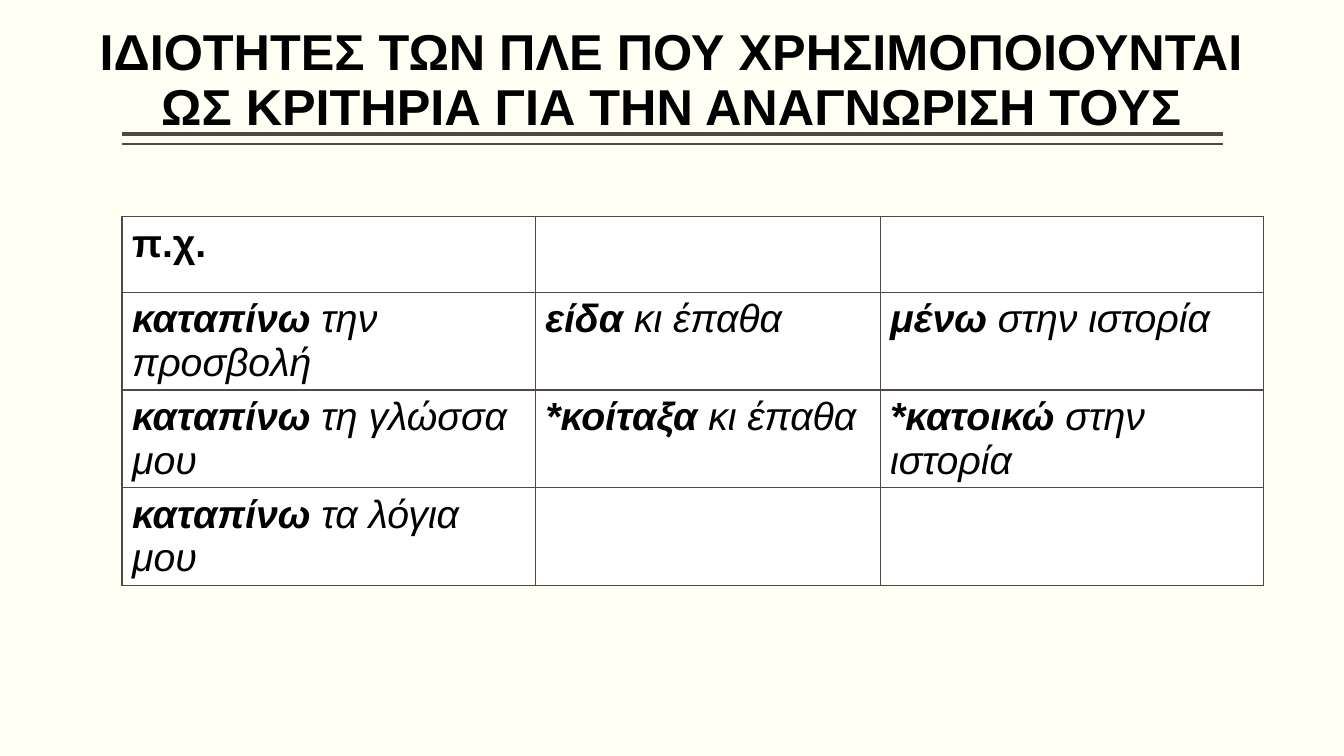
from lxml import etree
from pptx import Presentation
from pptx.dml.color import RGBColor
from pptx.enum import shapes, text
from pptx.oxml import ns
from pptx.util import Inches, Pt

COLORS = {"page": "FFFFF3", "rule": "514843", "cell": "FFFFFF", "ink": "000000"}
FONT = "Arial"
LEFT = 1.21
TITLE = "ΙΔΙΟΤΗΤΕΣ ΤΩΝ ΠΛΕ ΠΟΥ ΧΡΗΣΙΜΟΠΟΙΟΥΝΤΑΙ ΩΣ ΚΡΙΤΗΡΙΑ ΓΙΑ ΤΗΝ ΑΝΑΓΝΩΡΙΣΗ ΤΟΥΣ"
COLUMN_WIDTHS = [4.1, 3.42, 3.8]
ROW_HEIGHTS = [0.75, 0.97, 0.97, 0.97]

# Each cell holds a bold verb and the rest of the phrase
EXAMPLES = [
    [("π.χ.", ""), None, None],
    [("καταπίνω", " την προσβολή"), ("είδα", " κι έπαθα"), ("μένω", " στην ιστορία")],
    [("καταπίνω", " τη γλώσσα μου"), ("*κοίταξα", " κι έπαθα"), ("*κατοικώ", " στην ιστορία")],
    [("καταπίνω", " τα λόγια μου"), None, None],
]


def color(name):
    return RGBColor.from_string(COLORS[name])


def format_span(span, size, bold, italic=False):
    span.font.name = FONT
    span.font.size = Pt(size)
    span.font.bold = bold
    span.font.italic = italic
    span.font.color.rgb = color("ink")


def add_title(page):
    title = page.shapes.title
    title.left, title.top = Inches(0.8), Inches(0.25)
    title.width, title.height = Inches(11.72), Inches(1.15)
    frame = title.text_frame
    frame.text = TITLE
    frame.word_wrap = True
    frame.auto_size = text.MSO_AUTO_SIZE.NONE
    frame.vertical_anchor = text.MSO_ANCHOR.BOTTOM
    frame.margin_left = frame.margin_right = 0
    frame.margin_top = frame.margin_bottom = Inches(0.05)
    para = frame.paragraphs[0]
    para.alignment = text.PP_ALIGN.CENTER
    para.line_spacing = 0.9
    format_span(para.runs[0], 36, True)


def add_rule(page, top, weight):
    rule = page.shapes.add_connector(
        shapes.MSO_CONNECTOR.STRAIGHT,
        Inches(LEFT), Inches(top), Inches(12.13), Inches(top))
    rule.line.color.rgb = color("rule")
    rule.line.width = Pt(weight)
    etree.SubElement(rule._element.spPr, ns.qn("a:effectLst"))


def set_borders(cell):
    properties = cell._tc.get_or_add_tcPr()
    for index, side in enumerate(("lnL", "lnR", "lnT", "lnB")):
        border = etree.Element(ns.qn("a:" + side), w=str(Pt(1)))
        fill = etree.SubElement(border, ns.qn("a:solidFill"))
        etree.SubElement(fill, ns.qn("a:srgbClr"), val=COLORS["rule"])
        properties.insert(index, border)


def fill_cell(cell, phrase, italic):
    cell.fill.solid()
    cell.fill.fore_color.rgb = color("cell")
    set_borders(cell)
    if phrase is None:
        return
    para = cell.text_frame.paragraphs[0]
    for part, bold in zip(phrase, (True, False)):
        if part:
            span = para.add_run()
            span.text = part
            format_span(span, 28, bold, italic)


def add_examples(page):
    table = page.shapes.add_table(
        len(EXAMPLES), len(COLUMN_WIDTHS), Inches(LEFT), Inches(2.15),
        Inches(sum(COLUMN_WIDTHS)), Inches(sum(ROW_HEIGHTS))).table
    for column, width in zip(table.columns, COLUMN_WIDTHS):
        column.width = Inches(width)
    for row, height in zip(table.rows, ROW_HEIGHTS):
        row.height = Inches(height)
    for r, phrases in enumerate(EXAMPLES):
        for c, phrase in enumerate(phrases):
            fill_cell(table.cell(r, c), phrase, italic=r > 0)


def main():
    deck = Presentation()
    deck.slide_width, deck.slide_height = Inches(13.33), Inches(7.5)
    page = deck.slides.add_slide(deck.slide_layouts[5])
    page.background.fill.solid()
    page.background.fill.fore_color.rgb = color("page")

    # Heading with its double rule
    add_title(page)
    add_rule(page, 1.33, 3)
    add_rule(page, 1.43, 1)

    # Example phrases
    add_examples(page)
    deck.save("out.pptx")


if __name__ == "__main__":
    main()
